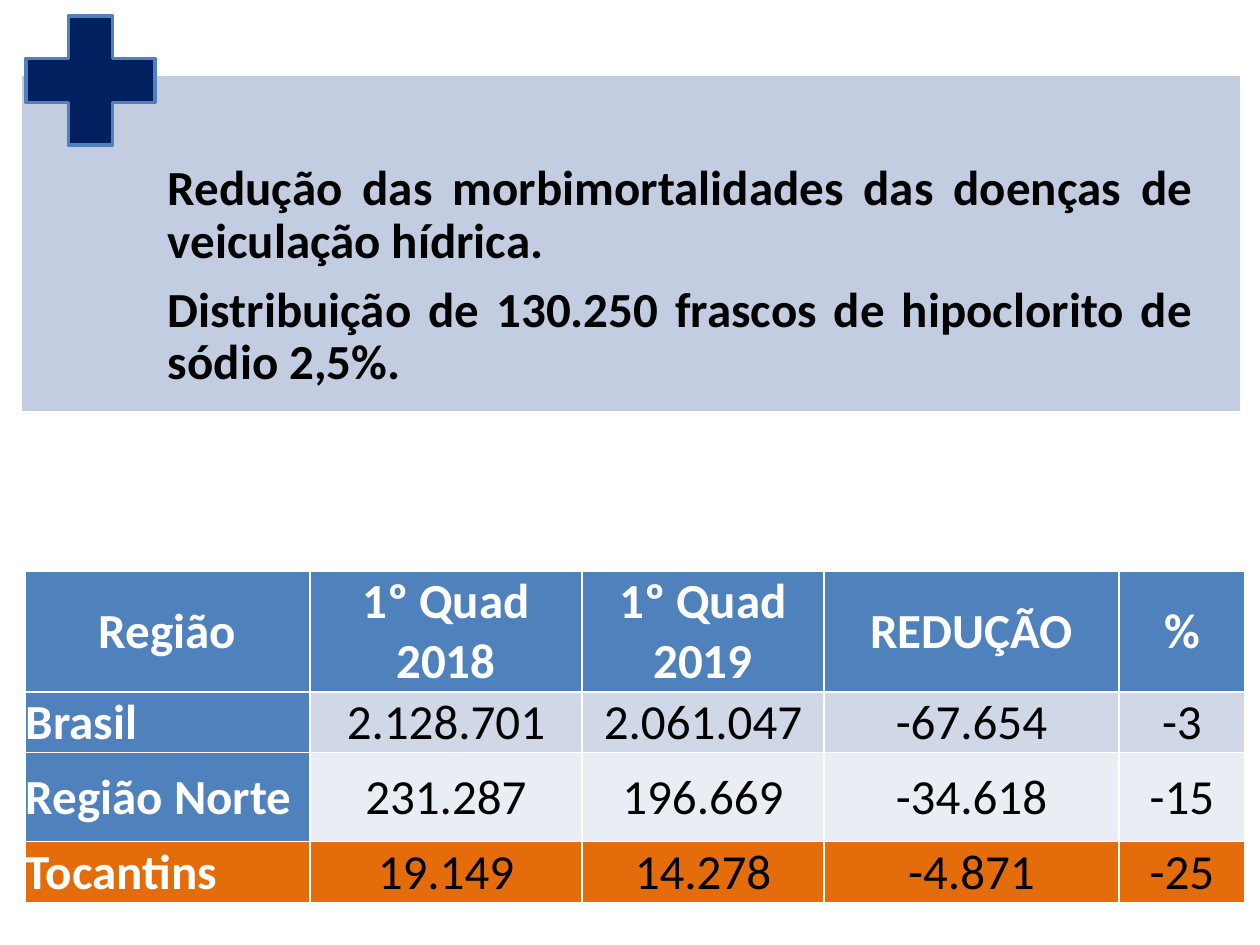
"""Builds the slide on the reduction of waterborne diseases."""
from pptx import Presentation
from pptx.dml.color import RGBColor
from pptx.enum.shapes import MSO_SHAPE
from pptx.enum.text import MSO_ANCHOR, MSO_AUTO_SIZE, PP_ALIGN
from pptx.oxml.ns import qn
from pptx.util import Emu, Pt

EMU_PER_PX = 914400 / 126
WHITE = RGBColor(0xFF, 0xFF, 0xFF)
BLACK = RGBColor(0x00, 0x00, 0x00)
NAVY = RGBColor(0x00, 0x20, 0x60)
BLUE = RGBColor(0x4F, 0x81, 0xBD)
PANEL_BLUE = RGBColor(0xC2, 0xCD, 0xE1)
BAND_DARK = RGBColor(0xD0, 0xD8, 0xE8)
BAND_LIGHT = RGBColor(0xE9, 0xED, 0xF4)
ORANGE = RGBColor(0xE4, 0x6C, 0x0A)
RECTANGLE, CROSS = MSO_SHAPE.RECTANGLE, MSO_SHAPE.CROSS
LEFT, CENTER, JUSTIFY = PP_ALIGN.LEFT, PP_ALIGN.CENTER, PP_ALIGN.JUSTIFY
TOP, MIDDLE = MSO_ANCHOR.TOP, MSO_ANCHOR.MIDDLE
NO_AUTOFIT = MSO_AUTO_SIZE.NONE

GOALS = [
    "Redução das morbimortalidades das doenças de veiculação hídrica. ",
    "Distribuição de 130.250 frascos de hipoclorito de sódio 2,5%.",
]
COLUMN_WIDTHS = [285, 272, 242, 295, 126]
ROW_HEIGHTS = [116, 59, 89, 59]
CASES = [
    ["Região", "1º Quad 2018", "1º Quad 2019", "REDUÇÃO", "%"],
    ["Brasil", "2.128.701", "2.061.047", "-67.654", "-3"],
    ["Região Norte", "231.287", "196.669", "-34.618", "-15"],
    ["Tocantins", "19.149", "14.278", "-4.871", "-25"],
]
ROW_FILLS = [BLUE, BAND_DARK, BAND_LIGHT, ORANGE]
LABEL_FILLS = [BLUE, BLUE, BLUE, ORANGE]


def px(length):
    """Turns pixels into EMU."""
    return Emu(round(length * EMU_PER_PX))


def apply(target, formats):
    """Sets each named attribute of the target."""
    for name, value in formats.items():
        setattr(target, name, value)


class SlideBuilder:
    """Holds the text style and the current slide."""

    def __init__(self, slide):
        self.slide = slide
        self.font = {"name": "Calibri", "size": Pt(28)}

    def add_span(self, para, text, color, bold):
        """Adds one styled span to a paragraph."""
        span = para.add_run()
        span.text = text
        apply(span.font, {**self.font, "bold": bold})
        span.font.color.rgb = color

    def shape(self, kind, frame, fill, line):
        """Adds a filled preset shape."""
        shape = self.slide.shapes.add_shape(kind, *map(px, frame))
        shape.shadow.inherit = False
        shape.fill.solid()
        shape.fill.fore_color.rgb = fill
        shape.line.color.rgb = line
        shape.line.width = Pt(2)
        return shape

    def body(self, frame, texts):
        """Places the body placeholder in front with unbulleted paragraphs."""
        box = self.slide.placeholders[1]
        apply(box, dict(zip(("left", "top", "width", "height"), map(px, frame))))
        self.slide.shapes.element.append(box.element)
        margins = dict.fromkeys(
            ("margin_left", "margin_top", "margin_right", "margin_bottom"), px(8))
        apply(box.text_frame, {**margins, "word_wrap": True,
                               "auto_size": NO_AUTOFIT, "vertical_anchor": TOP})
        for index, text in enumerate(texts):
            para = (box.text_frame.add_paragraph() if index
                    else box.text_frame.paragraphs[0])
            properties = para._p.get_or_add_pPr()
            properties.set("marL", "0")
            properties.set("indent", "0")
            properties.append(properties.makeelement(qn("a:buNone"), {}))
            apply(para, {"alignment": JUSTIFY, "line_spacing": 0.9,
                         "space_before": Pt(0), "space_after": Pt(9)})
            self.add_span(para, text, BLACK, True)

    def table(self, left, top, widths, heights, rows):
        """Adds the table with a header row and a label column."""
        frame = self.slide.shapes.add_table(
            len(rows), len(widths), px(left), px(top),
            px(sum(widths)), px(sum(heights)))
        table = frame.table
        table.first_col = True
        for column, width in zip(table.columns, widths):
            column.width = px(width)
        for row, height in zip(table.rows, heights):
            row.height = px(height)
        for row_index, texts in enumerate(rows):
            for column_index, text in enumerate(texts):
                is_label = column_index == 0
                is_heading = row_index == 0 or is_label
                fills = LABEL_FILLS if is_label else ROW_FILLS
                cell = table.cell(row_index, column_index)
                apply(cell, {"margin_left": px(1), "margin_top": px(1),
                             "margin_right": px(1), "margin_bottom": px(0),
                             "vertical_anchor": MIDDLE})
                cell.fill.solid()
                cell.fill.fore_color.rgb = fills[row_index]
                para = cell.text_frame.paragraphs[0]
                para.alignment = LEFT if is_label and row_index else CENTER
                self.add_span(para, text, WHITE if is_heading else BLACK, is_heading)


def main():
    """Builds and saves the deck."""
    deck = Presentation()
    deck.slide_width, deck.slide_height = px(1260), px(945)
    page = deck.slides.add_slide(deck.slide_layouts[1])
    title = page.shapes.title.element
    title.getparent().remove(title)

    builder = SlideBuilder(page)
    builder.table(25, 571, COLUMN_WIDTHS, ROW_HEIGHTS, CASES)
    builder.shape(RECTANGLE, (20, 74, 1222, 339), PANEL_BLUE, WHITE)
    builder.body((160, 155, 1040, 166), GOALS)
    cross = builder.shape(CROSS, (26, 16, 129, 129), NAVY, BLUE)
    cross.adjustments[0] = 0.33
    deck.save("out.pptx")


if __name__ == "__main__":
    main()
